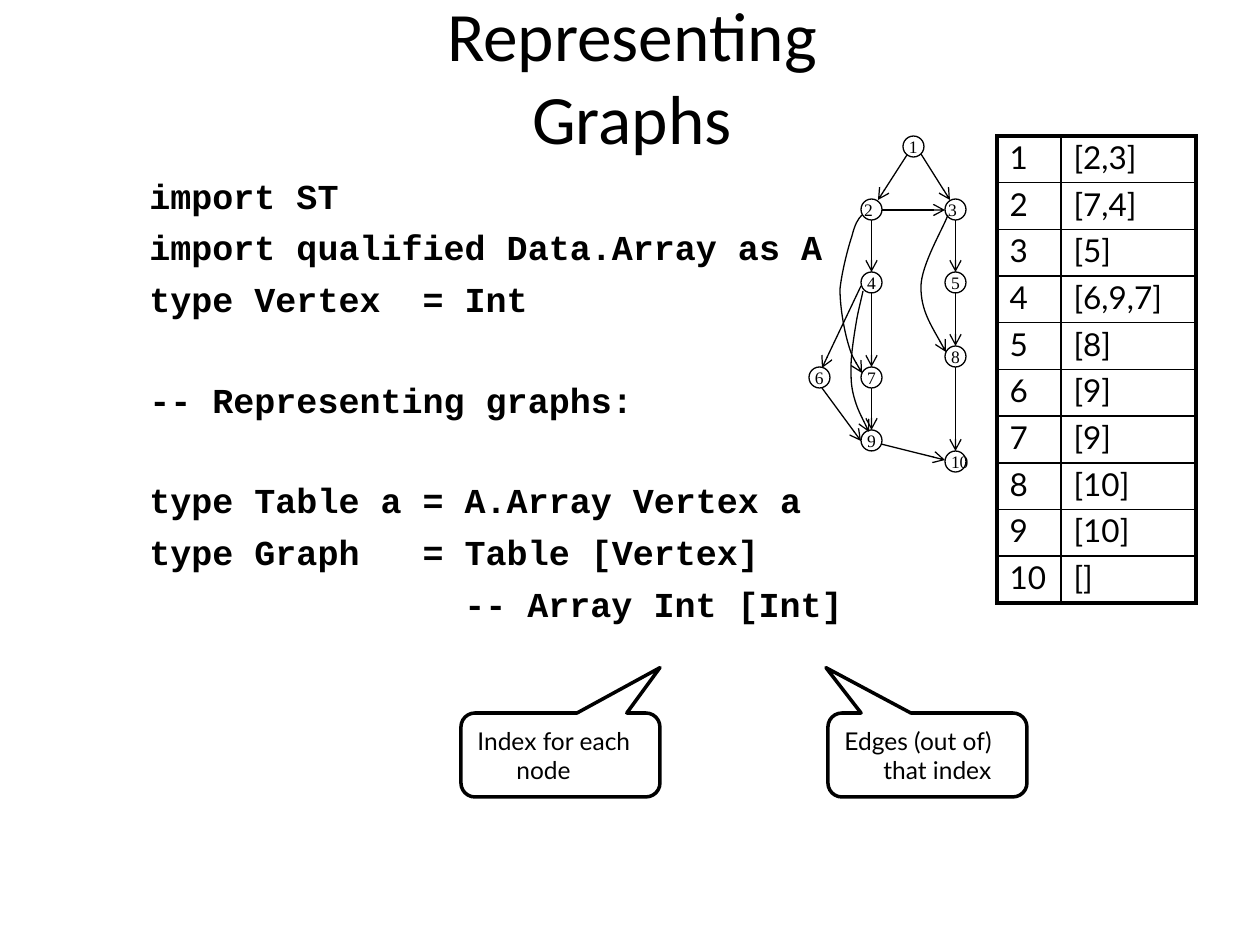
import pptx
import pptx.util
import pptx.dml.color
import pptx.enum.shapes
import pptx.enum.text
import pptx.oxml
import pptx.oxml.ns

PX = 914400 / 126
COLORS = {"ink": "000000", "paper": "FFFFFF"}

TITLE = "Representing Graphs"
# Code blocks, separated by one empty line: (line, indent in characters)
CODE_BLOCKS = [
    [("import ST", 0), ("import qualified Data.Array as A", 0), ("type Vertex  = Int", 0)],
    [("-- Representing graphs:", 0)],
    [("type Table a = A.Array Vertex a", 0), ("type Graph   = Table [Vertex]", 0),
     ("-- Array Int [Int]", 15)],
]
# (text, left, horizontal position of the tip)
CALLOUTS = [("Index for each node", 461, 0.5), ("Edges (out of) that index", 828, -0.51)]

# Left and top of each vertex
VERTICES = {1: (903, 136), 2: (861, 199), 3: (945, 199), 4: (861, 272), 5: (945, 272),
            6: (809, 367), 7: (861, 367), 8: (945, 346), 9: (861, 430), 10: (945, 451)}
DIAMETER = 21
FLUSH_LABELS = (2, 3)
VERTICAL_EDGES = [(3, 5), (5, 8), (8, 10), (2, 4), (4, 7), (7, 9)]
SLANTED_EDGES = [
    ((882, 210), (945, 210)), ((907, 155), (878, 200)), ((921, 154), (950, 200)),
    ((861, 286), (822, 368)), ((881, 444), (945, 460)), ((822, 388), (861, 441)),
]
# Start point, then three Bezier points per segment
CURVED_EDGES = [
    [(862, 215), (858, 219), (855, 224), (852, 236), (848, 248), (842, 271), (840, 289),
     (840, 307), (844, 329), (848, 343), (852, 357), (859, 368), (862, 373)],
    [(863, 291), (861, 301), (858, 311), (856, 324), (854, 336), (851, 355), (851, 367),
     (851, 379), (851, 386), (854, 397), (857, 408), (863, 420), (869, 432)],
    [(948, 215), (944, 227), (921, 265), (921, 287), (921, 310), (934, 330), (946, 352)],
]
ADJACENCY = ["[2,3]", "[7,4]", "[5]", "[6,9,7]", "[8]", "[9]", "[9]", "[10]", "[10]", "[]"]
COLUMN_WIDTHS = (64, 135)
TABLE_HEIGHT = 466


def px(value):
    return pptx.util.Emu(round(value * PX))


def box(*lengths):
    return [px(length) for length in lengths]


def rgb(name):
    return pptx.dml.color.RGBColor.from_string(COLORS[name])


def add_run(paragraph, text, size, font, bold=False):
    run = paragraph.add_run()
    run.text = text
    run.font.size = pptx.util.Pt(size)
    run.font.name = font
    run.font.bold = bold
    run.font.color.rgb = rgb("ink")


def outline(shape, width):
    shape.line.color.rgb = rgb("ink")
    shape.line.width = pptx.util.Pt(width)


def add_arrowhead(shape):
    line = shape.element.find(".//" + pptx.oxml.ns.qn("a:ln"))
    line.append(pptx.oxml.parse_xml(
        f'<a:tailEnd {pptx.oxml.ns.nsdecls("a")} type="arrow"/>'))


def add_arrow(group, start, end):
    arrow = group.shapes.add_connector(
        pptx.enum.shapes.MSO_CONNECTOR.STRAIGHT, *box(*start, *end))
    outline(arrow, 0.75)
    add_arrowhead(arrow)
    arrow.element.spPr.append(pptx.oxml.parse_xml(
        f'<a:effectLst {pptx.oxml.ns.nsdecls("a")}/>'))


def add_curved_arrow(group, points):
    builder = group.shapes.build_freeform(*points[0], scale=PX)
    builder.add_line_segments(points[1:], close=False)
    curve = builder.convert_to_shape()
    curve.shadow.inherit = False
    curve.fill.background()
    outline(curve, 0.75)
    add_arrowhead(curve)
    # Every three straight segments become one Bezier segment
    segments = list(curve.element.iter(pptx.oxml.ns.qn("a:lnTo")))
    for i in range(0, len(segments), 3):
        bezier = pptx.oxml.parse_xml(f'<a:cubicBezTo {pptx.oxml.ns.nsdecls("a")}/>')
        segments[i].addprevious(bezier)
        for segment in segments[i:i + 3]:
            bezier.append(segment[0])
            segment.getparent().remove(segment)


def set_borders(cell, widths):
    properties = cell._tc.get_or_add_tcPr()
    for i, (side, width) in enumerate(zip("LRTB", widths)):
        properties.insert(i, pptx.oxml.parse_xml(
            f'<a:ln{side} {pptx.oxml.ns.nsdecls("a")} w="{pptx.util.Pt(width)}"><a:solidFill>'
            f'<a:srgbClr val="{COLORS["ink"]}"/></a:solidFill></a:ln{side}>'))


presentation = pptx.Presentation()
presentation.slide_width, presentation.slide_height = box(1260, 945)
slide = presentation.slides.add_slide(presentation.slide_layouts[6])

# Title, wrapped onto two lines
title = slide.shapes.add_textbox(*box(328, 42, 608, 66)).text_frame
title.word_wrap = True
title.margin_left = title.margin_right = px(20)
title.vertical_anchor = pptx.enum.text.MSO_ANCHOR.MIDDLE
title.paragraphs[0].alignment = pptx.enum.text.PP_ALIGN.CENTER
add_run(title.paragraphs[0], TITLE, 39.6, "Calibri")

# Code
code = slide.shapes.add_textbox(*box(137, 168, 1058, 660)).text_frame
code.word_wrap = True
paragraph = code.paragraphs[0]
for b, block in enumerate(CODE_BLOCKS):
    for n, (line, indent) in enumerate(block):
        if b or n:
            paragraph = code.add_paragraph()
        paragraph.space_before = pptx.util.Pt(33.5 if b and not n else 5.5)
        if indent:
            paragraph._p.get_or_add_pPr().set("marL", str(pptx.util.Pt(12 * indent)))
        add_run(paragraph, line, 20, "Courier New", bold=True)

# Callouts
for text, left, tip in CALLOUTS:
    callout = slide.shapes.add_shape(
        pptx.enum.shapes.MSO_SHAPE.ROUNDED_RECTANGULAR_CALLOUT, *box(left, 713, 199, 84))
    callout.adjustments[0], callout.adjustments[1] = tip, -1.04
    callout.shadow.inherit = False
    callout.fill.background()
    outline(callout, 2)
    callout.text_frame.word_wrap = True
    callout.text_frame.vertical_anchor = pptx.enum.text.MSO_ANCHOR.MIDDLE
    label = callout.text_frame.paragraphs[0]
    label.alignment = pptx.enum.text.PP_ALIGN.LEFT
    hanging = label._p.get_or_add_pPr()
    hanging.set("marL", str(px(39)))
    hanging.set("indent", str(px(-39)))
    add_run(label, text, 14, "Lato")

# Graph
graph = slide.shapes.add_group_shape()
for number, (left, top) in VERTICES.items():
    vertex = graph.shapes.add_shape(
        pptx.enum.shapes.MSO_SHAPE.OVAL, *box(left, top, DIAMETER, DIAMETER))
    vertex.shadow.inherit = False
    vertex.fill.solid()
    vertex.fill.fore_color.rgb = rgb("paper")
    outline(vertex, 0.75)
    frame = vertex.text_frame
    frame.word_wrap = False
    frame.vertical_anchor = pptx.enum.text.MSO_ANCHOR.MIDDLE
    frame.margin_top = frame.margin_right = frame.margin_bottom = 0
    frame.margin_left = 0 if number in FLUSH_LABELS else px(3)
    frame.paragraphs[0].alignment = pptx.enum.text.PP_ALIGN.LEFT
    add_run(frame.paragraphs[0], str(number), 10, "Times New Roman")

for upper, lower in VERTICAL_EDGES:
    x = VERTICES[upper][0] + DIAMETER / 2
    add_arrow(graph, (x, VERTICES[upper][1] + DIAMETER), (x, VERTICES[lower][1]))
for start, end in SLANTED_EDGES:
    add_arrow(graph, start, end)
for points in CURVED_EDGES:
    add_curved_arrow(graph, points)

# Adjacency table
adjacency = slide.shapes.add_table(
    len(ADJACENCY), 2, *box(997, 136, sum(COLUMN_WIDTHS), TABLE_HEIGHT)).table
adjacency.first_row = adjacency.horz_banding = False
for column, width in zip(adjacency.columns, COLUMN_WIDTHS):
    column.width = px(width)
for r, neighbours in enumerate(ADJACENCY):
    for c, text in enumerate((str(r + 1), neighbours)):
        cell = adjacency.cell(r, c)
        cell.fill.background()
        outer = (c == 0, c == 1, r == 0, r == len(ADJACENCY) - 1)
        set_borders(cell, [2.25 if edge else 1 for edge in outer])
        cell.text_frame.paragraphs[0].line_spacing = 0.9
        add_run(cell.text_frame.paragraphs[0], text, 18, "Lato")

presentation.save("out.pptx")
